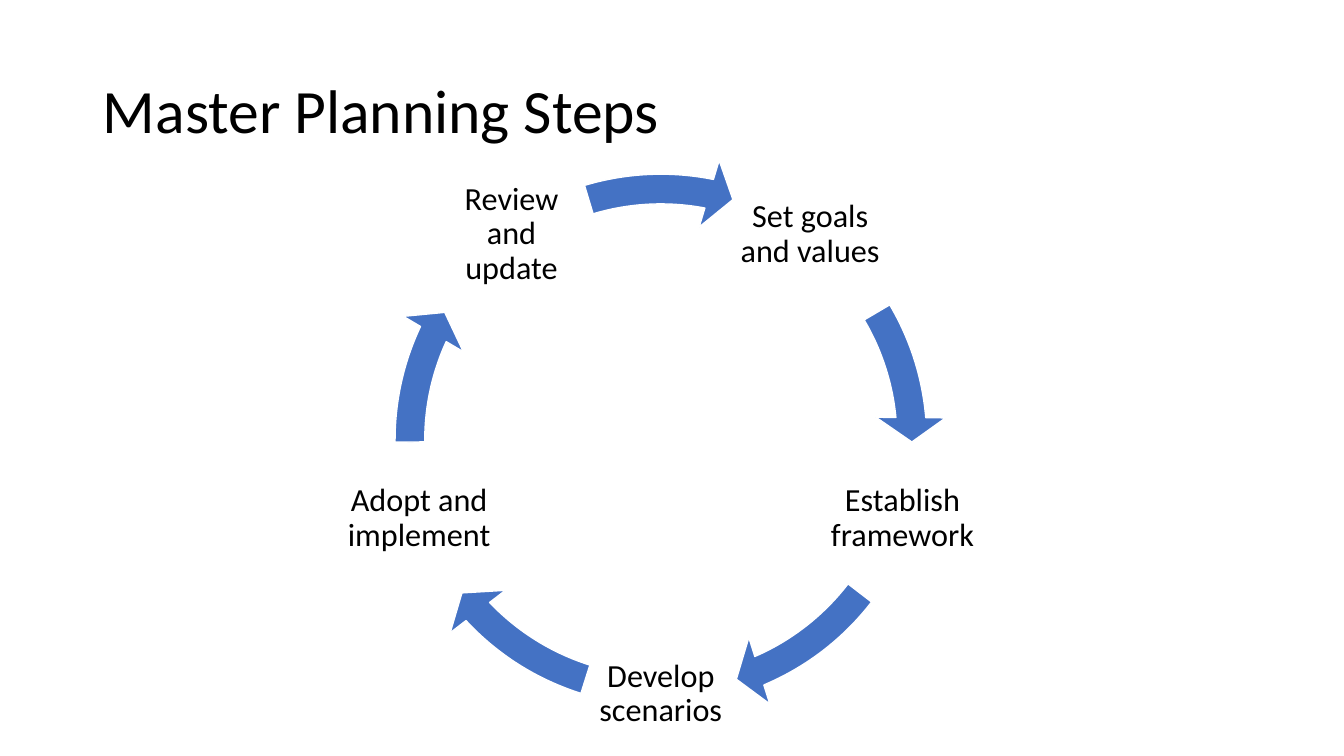
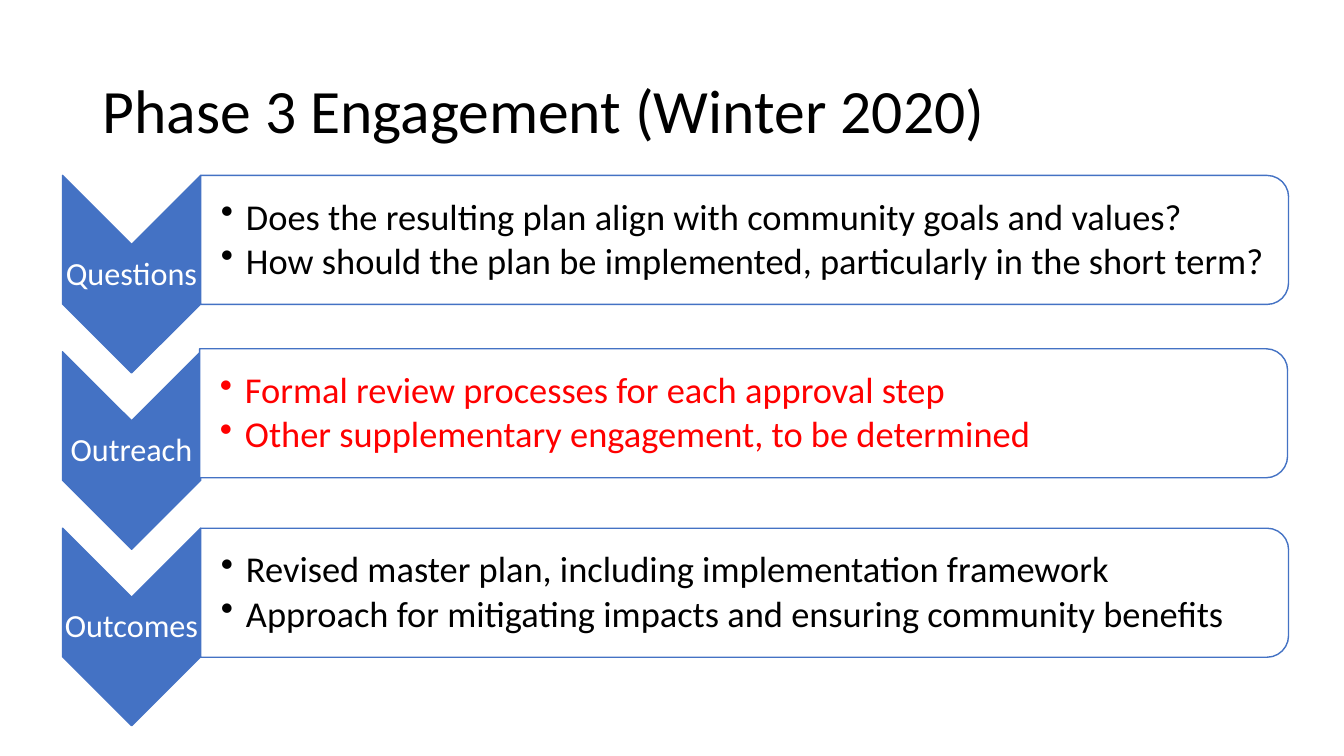
from math import cos, radians, sin

from lxml import etree
from pptx import Presentation
from pptx.dml.color import RGBColor
from pptx.enum.shapes import MSO_SHAPE
from pptx.enum.text import MSO_ANCHOR, PP_ALIGN
from pptx.oxml.ns import qn
from pptx.util import Emu, Pt

ARROW = MSO_SHAPE.CIRCULAR_ARROW
CHEVRON = MSO_SHAPE.CHEVRON
PANEL = MSO_SHAPE.ROUND_2_SAME_RECTANGLE
MIDDLE = MSO_ANCHOR.MIDDLE
LEFT, CENTER = PP_ALIGN.LEFT, PP_ALIGN.CENTER

FONT = "Calibri"
BLACK, WHITE, BLUE, RED = "000000", "FFFFFF", "4472C4", "FF0000"

STEPS = [
    ("Set goals and values", 329.44, 354.88),
    ("Establish framework", 37.57, 66.9),
    ("Develop scenarios", 107.5, 136.84),
    ("Adopt and implement", 179.52, 204.96),
    ("Review and update", 253.31, 281.09),
]
ROWS = [
    ("Questions", 199, 174, BLACK,
     ["Does the resulting plan align with community goals and values?",
      "How should the plan be implemented, particularly in the short term?"]),
    ("Outreach", 198, 346, RED,
     ["Formal review processes for each approval step",
      "Other supplementary engagement, to be determined"]),
    ("Outcomes", 199, 524, BLACK,
     ["Revised master plan, including implementation framework",
      "Approach for mitigating impacts and ensuring community benefits"]),
]


def px(n):
    return Emu(round(n * 9144))


def color(text):
    return RGBColor.from_string(text)


def place(item, x, y, w, h):
    item.left, item.top, item.width, item.height = px(x), px(y), px(w), px(h)


def write(frame, lines, size=23, ink=BLACK, align=CENTER, after=0, bullet=False):
    frame.word_wrap = True
    frame.vertical_anchor = MIDDLE
    for i, line in enumerate(lines):
        para = frame.add_paragraph() if i else frame.paragraphs[0]
        para.alignment = align
        para.line_spacing = 0.9
        para.space_after = Pt(after)
        run = para.add_run()
        run.text = line
        run.font.name = FONT
        run.font.size = Pt(size)
        run.font.color.rgb = color(ink)
        if bullet:
            props = para._p.get_or_add_pPr()
            props.set("marL", str(px(25)))
            props.set("indent", str(-px(25)))
            etree.SubElement(props, qn("a:buChar")).set("char", "•")


def label(slide, box, lines, inset=2, left=None, **style):
    frame = slide.shapes.add_textbox(*map(px, box)).text_frame
    frame.margin_left = px(inset if left is None else left)
    frame.margin_right = frame.margin_top = frame.margin_bottom = px(inset)
    write(frame, lines, **style)


def shape(slide, kind, box, fill, line):
    item = slide.shapes.add_shape(kind, *map(px, box))
    item.shadow.inherit = False
    item.fill.solid()
    item.fill.fore_color.rgb = color(fill)
    item.line.color.rgb = color(line)
    item.line.width = Pt(1)
    return item


def turned(slide, kind, box, fill, line):
    x, y, w, h = box
    shift = (w - h) / 2
    item = shape(slide, kind, (x + shift, y - shift, h, w), fill, line)
    item.rotation = 90


def arrow(slide, box, start, end):
    item = shape(slide, ARROW, box, BLUE, WHITE)
    turn = 0.6
    values = (5.2 / 100, 5.6 * turn, end * turn, start * turn, 6.1 / 100)
    for i, value in enumerate(values):
        item.adjustments[i] = value


def page(deck, text):
    slide = deck.slides.add_slide(deck.slide_layouts[5])
    title = slide.shapes.title
    place(title, 92, 40, 1150, 145)
    write(title.text_frame, [text], size=44, align=LEFT)
    return slide


def cycle(slide):
    mid, center, radius, ring, side = 655.5, 436.5, 252, 567, 151
    for i, (text, start, end) in enumerate(STEPS):
        angle = radians(72 * i - 54)
        x = mid + radius * cos(angle) - side / 2
        y = center + radius * sin(angle) - side / 2
        label(slide, (x, y, side, side), [text], inset=3)
        arrow(slide, (mid - ring / 2, center - ring / 2, ring, ring), start, end)


def phases(slide):
    for i, (name, x, y, ink, lines) in enumerate(ROWS):
        top = 174 + 175 * i
        turned(slide, CHEVRON, (62, top, 137, 196), BLUE, BLUE)
        label(slide, (62, top + 69, 137, 59), [name], ink=WHITE)
        turned(slide, PANEL, (x, y, 1079, 128), WHITE, BLUE)
        label(slide, (x, y + 7, 1073, 115), lines, left=20, size=26,
              ink=ink, align=LEFT, after=3.5, bullet=True)


def main():
    deck = Presentation()
    deck.slide_width, deck.slide_height = px(1333), px(750)
    cycle(page(deck, "Master Planning Steps"))
    phases(page(deck, "Phase 3 Engagement (Winter 2020)"))
    deck.save("out.pptx")


if __name__ == "__main__":
    main()
